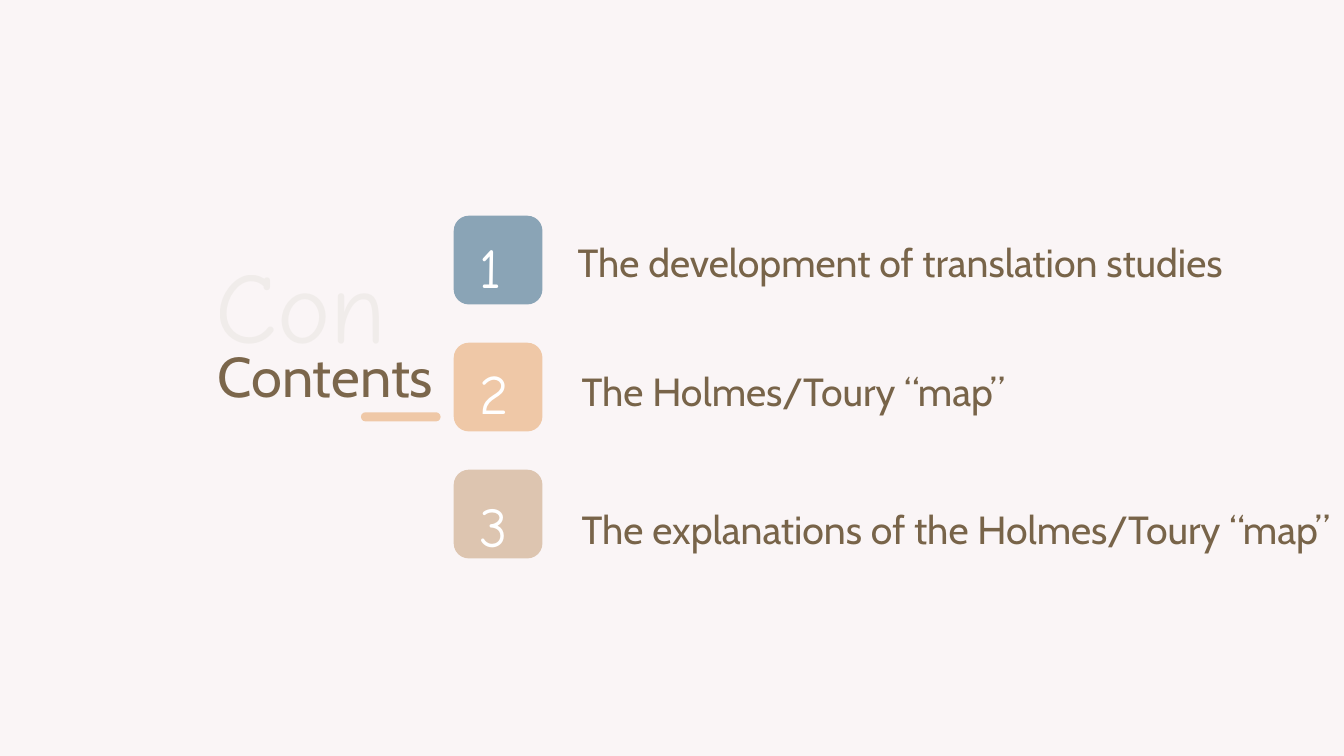
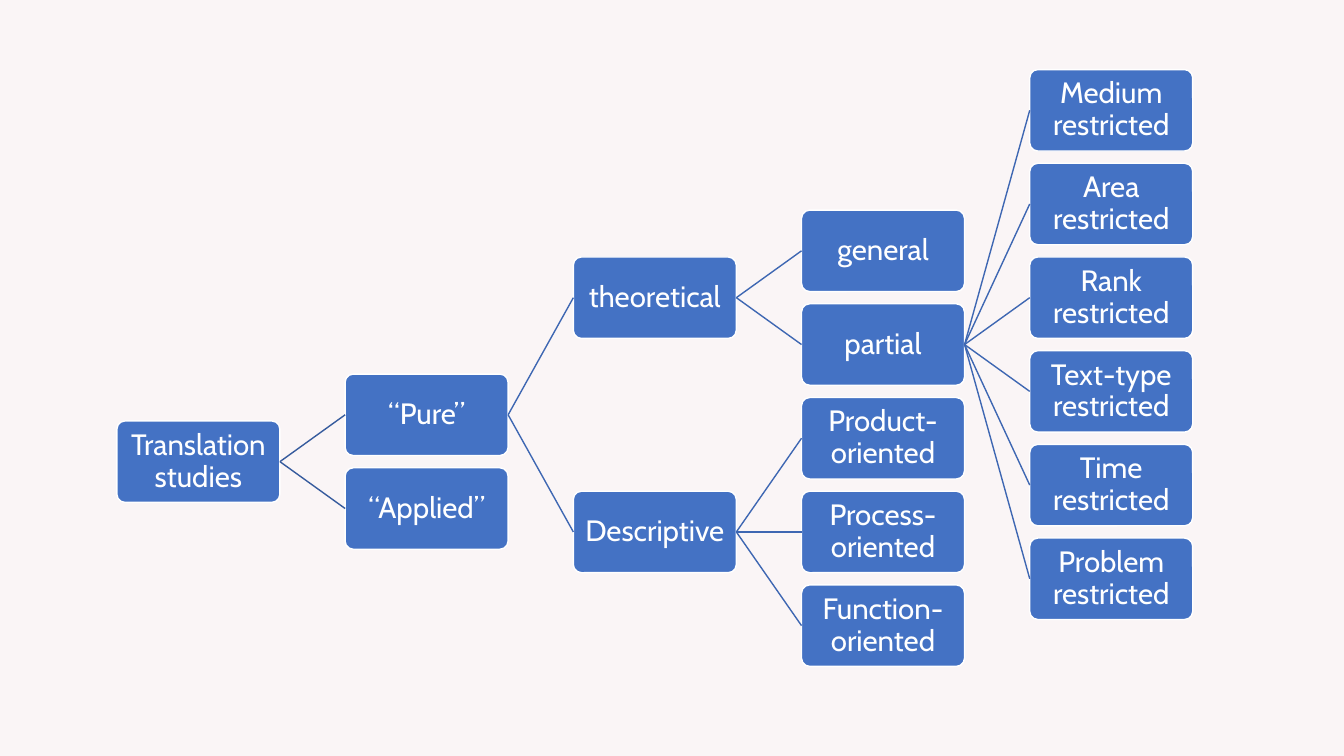
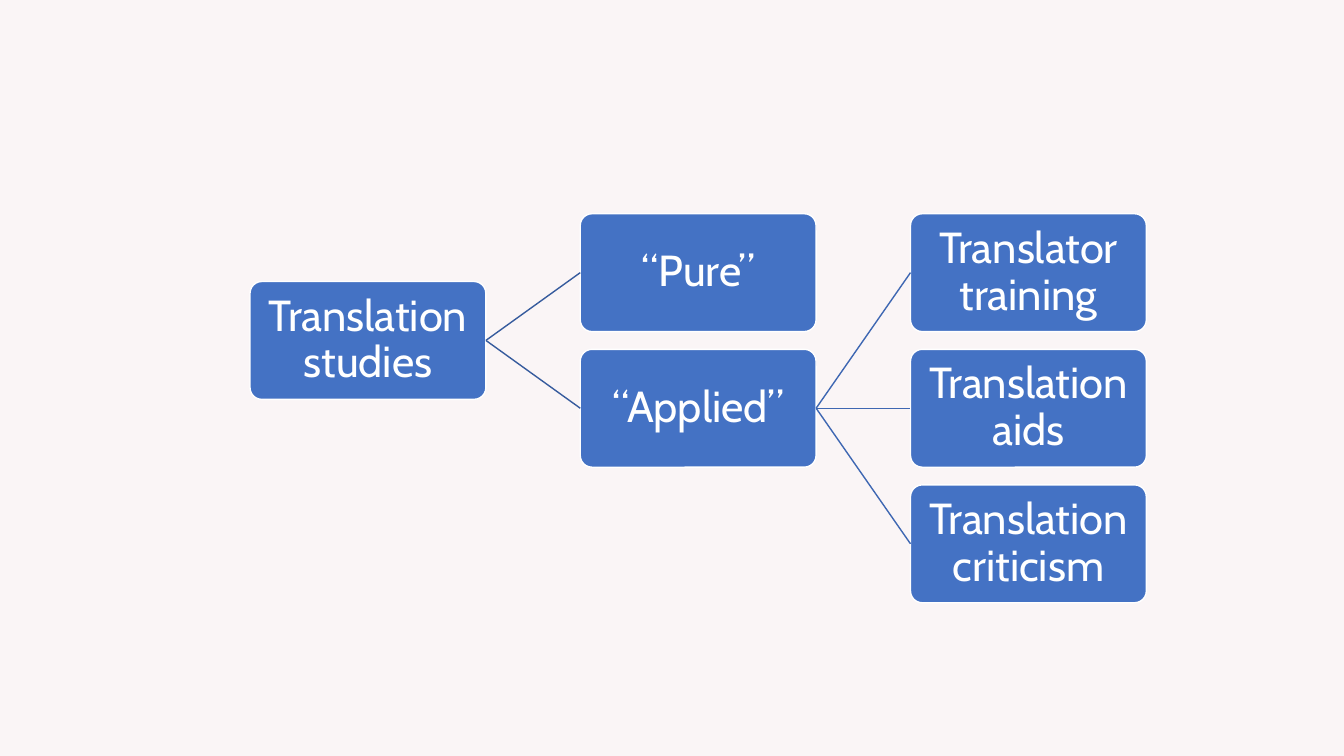
from lxml import etree
from pptx import Presentation
from pptx.dml.color import RGBColor
from pptx.enum.shapes import MSO_CONNECTOR, MSO_SHAPE
from pptx.enum.text import MSO_ANCHOR, MSO_AUTO_SIZE, PP_ALIGN
from pptx.oxml.ns import qn
from pptx.util import Inches, Pt

ROUNDED = MSO_SHAPE.ROUNDED_RECTANGLE
STRAIGHT = MSO_CONNECTOR.STRAIGHT
FIT_TEXT = MSO_AUTO_SIZE.SHAPE_TO_FIT_TEXT
MIDDLE, CENTER = MSO_ANCHOR.MIDDLE, PP_ALIGN.CENTER
LEFT_SITE, RIGHT_SITE = 1, 3

PAPER = RGBColor(0xFA, 0xF5, 0xF6)
WHITE = RGBColor(0xFF, 0xFF, 0xFF)
BROWN = RGBColor(0x78, 0x64, 0x49)
TITLE_BROWN = RGBColor(0x7B, 0x66, 0x4B)
GHOST = RGBColor(0xEE, 0xEA, 0xE7)
SLATE = RGBColor(0x8A, 0xA4, 0xB6)
PEACH = RGBColor(0xEF, 0xC8, 0xA7)
SAND = RGBColor(0xDD, 0xC5, 0xB0)
NODE_BLUE = RGBColor(0x44, 0x72, 0xC4)
ROOT_LINK = RGBColor(0x36, 0x5B, 0x9D)
LINK = RGBColor(0x3E, 0x67, 0xB2)

BODY_FONT, HAND_FONT = "Cabin", "Comic Neue"
ITEM_FORMAT = {"name": BODY_FONT, "size": Pt(28), "color": BROWN}
NUMBER_FORMAT = {"name": HAND_FONT, "size": Pt(40), "color": WHITE}
TITLE_FORMAT = {"name": BODY_FONT, "size": Pt(40), "color": TITLE_BROWN}
GHOST_FORMAT = {"name": HAND_FONT, "size": Pt(72), "color": GHOST}

# Badge colour, number top, and the item's text, left, top and width
CONTENTS = [
    (SLATE, 2.26, "The development of translation studies", 5.63, 2.32, 7.05),
    (PEACH, 3.51, "The Holmes/Toury “map”", 5.67, 3.59, 4.62),
    (SAND, 4.83, "The explanations of the Holmes/Toury “map”", 5.67, 4.96, 7.65),
]
BADGE_LEFT, BADGE_TOP, BADGE_SIZE, BADGE_STEP = 4.5, 2.14, 0.88, 1.26

# A node is (label, row) for a leaf, or (label, [children]) for a parent
PARTIAL = ("partial", [
    ("Medium restricted", 0),
    ("Area restricted", 1),
    ("Rank restricted", 2),
    ("Text-type restricted", 3),
    ("Time restricted", 4),
    ("Problem restricted", 5),
])
DESCRIPTIVE = ("Descriptive", [
    ("Product-oriented", 3.5),
    ("Process-oriented", 4.5),
    ("Function-oriented", 5.5),
])
FULL_MAP = ("Translation studies", [
    ("“Pure”", [("theoretical", [("general", 1.5), PARTIAL]), DESCRIPTIVE]),
    ("“Applied”", 4.25),
])
APPLIED_MAP = ("Translation studies", [
    ("“Pure”", 0),
    ("“Applied”", [
        ("Translator training", 0),
        ("Translation aids", 1),
        ("Translation criticism", 2),
    ]),
])
# Tree, left, right, top, text size, text inset
MAPS = [
    (FULL_MAP, 1.16, 11.83, 0.69, 21, 0.01),
    (APPLIED_MAP, 2.48, 11.37, 2.12, 31, 0.02),
]
COLUMN_STEP, ROW_STEP = 1.4, 1.15  # in node widths and node heights


def write(frame, text, text_format):
    para = frame.paragraphs[0]
    span = para.add_run()
    span.text = text
    for name, value in text_format.items():
        if name == "color":
            span.font.color.rgb = value
        else:
            setattr(span.font, name, value)
    return para


def add_label(page, text, left, top, width, height, text_format):
    box = page.shapes.add_textbox(*map(Inches, (left, top, width, height)))
    box.text_frame.word_wrap = False
    box.text_frame.auto_size = FIT_TEXT
    write(box.text_frame, text, text_format)
    return box


def add_rounded(page, left, top, width, height, fill, corner):
    shape = page.shapes.add_shape(ROUNDED, *map(Inches, (left, top, width, height)))
    shape.shadow.inherit = False
    shape.adjustments[0] = corner
    shape.fill.solid()
    shape.fill.fore_color.rgb = fill
    shape.line.fill.background()
    return shape


def build_contents(page):
    for index, (color, number_top, text, left, top, width) in enumerate(CONTENTS):
        badge_top = BADGE_TOP + index * BADGE_STEP
        add_rounded(page, BADGE_LEFT, badge_top, BADGE_SIZE, BADGE_SIZE, color, 0.17)
        add_label(page, str(index + 1), 4.66, number_top, 0.6, 0.77, NUMBER_FORMAT)
        add_label(page, text, left, top, width, 0.57, ITEM_FORMAT)
    ghost = add_label(page, "Con", 2.04, 2.36, 2.3, 1.31, GHOST_FORMAT)
    for color in ghost.text_frame._txBody.iter(qn("a:srgbClr")):
        etree.SubElement(color, qn("a:alpha"), val="80000")
    add_label(page, "Contents", 2.06, 3.34, 2.42, 0.77, TITLE_FORMAT)
    add_rounded(page, 3.58, 4.09, 0.79, 0.09, PEACH, 0.5)


def depth_of(node):
    branch = node[1]
    return 1 + max(map(depth_of, branch)) if isinstance(branch, list) else 1


def row_of(node):
    """A parent stands midway between its first and last child."""
    branch = node[1]
    if isinstance(branch, list):
        return (row_of(branch[0]) + row_of(branch[-1])) / 2
    return branch


def add_link(page, parent, child, color):
    link = page.shapes.add_connector(STRAIGHT, 0, 0, 0, 0)
    link.begin_connect(parent, RIGHT_SITE)
    link.end_connect(child, LEFT_SITE)
    link.line.color.rgb = color
    link.line.width = Pt(1)
    etree.SubElement(link._element.spPr, qn("a:effectLst"))


def build_map(page, tree, left, right, top, size, inset):
    width = (right - left) / (1 + COLUMN_STEP * (depth_of(tree) - 1))
    height = width / 2
    text_format = {"name": BODY_FONT, "size": Pt(size), "color": WHITE}

    def add_node(node, column):
        """Draw a node and everything below it, and return its box."""
        label, branch = node
        box = add_rounded(page, left + column * COLUMN_STEP * width,
                          top + row_of(node) * ROW_STEP * height,
                          width, height, NODE_BLUE, 0.1)
        box.line.color.rgb = WHITE
        box.line.width = Pt(1)
        frame = box.text_frame
        frame.word_wrap = True
        frame.vertical_anchor = MIDDLE
        for side in ("left", "top", "right", "bottom"):
            setattr(frame, f"margin_{side}", Inches(inset))
        para = write(frame, label, text_format)
        para.alignment = CENTER
        para.line_spacing = 0.9
        for child in branch if isinstance(branch, list) else []:
            child_box = add_node(child, column + 1)
            add_link(page, box, child_box, LINK if column else ROOT_LINK)
        return box

    add_node(tree, 0)


def main():
    deck = Presentation()
    deck.slide_width, deck.slide_height = Inches(13.33), Inches(7.5)
    background = deck.slide_master.background.fill
    background.solid()
    background.fore_color.rgb = PAPER
    blank = deck.slide_layouts[6]
    build_contents(deck.slides.add_slide(blank))
    for tree_map in MAPS:
        build_map(deck.slides.add_slide(blank), *tree_map)
    deck.save("out.pptx")


if __name__ == "__main__":
    main()
